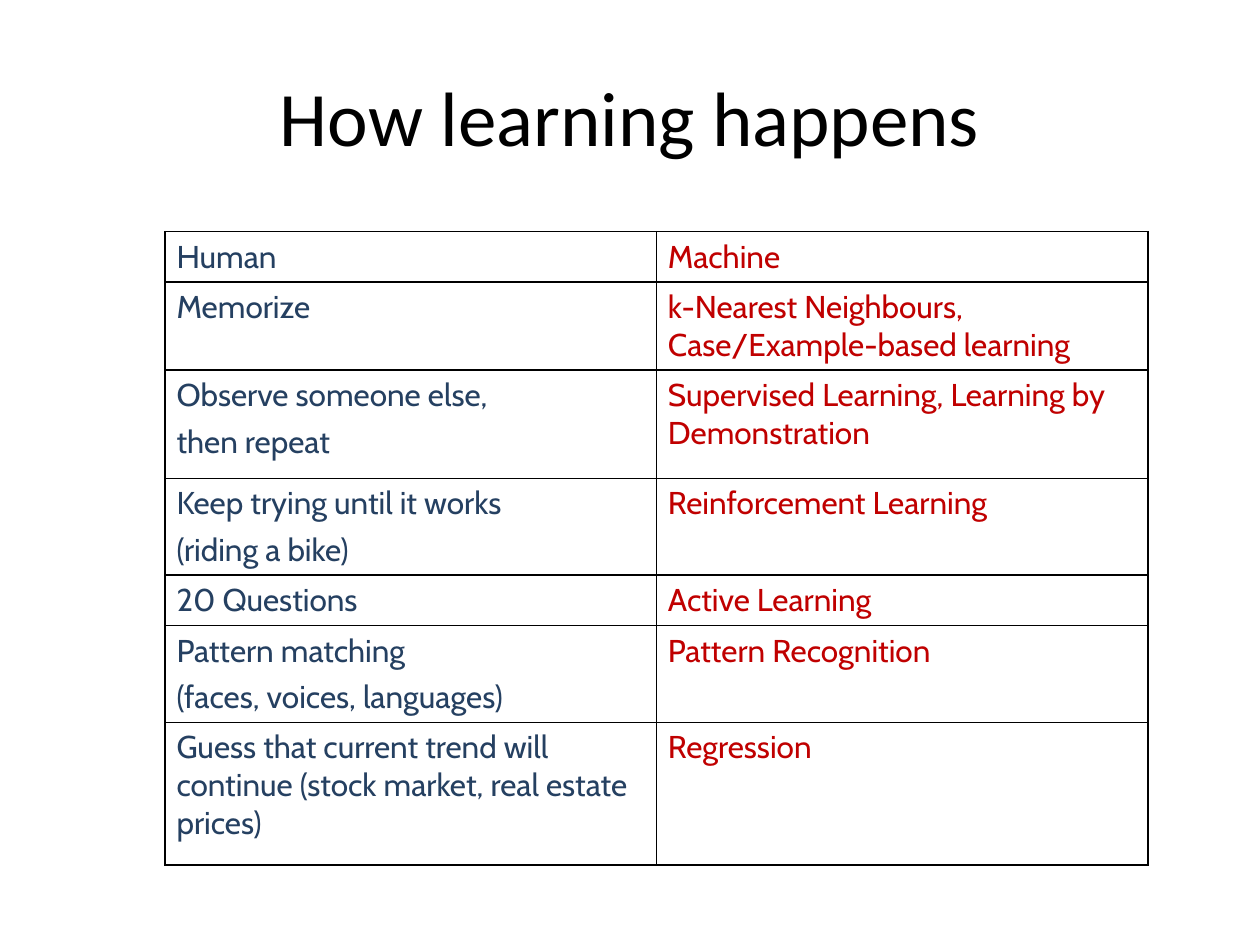
from lxml import etree
from pptx import Presentation
from pptx.dml.color import RGBColor
from pptx.enum import text
from pptx.oxml import ns
from pptx.util import Pt

COLORS = {"title": "000000", "human": "254061", "machine": "C00000", "border": "000000"}

# Row height, human learning, machine learning ("\n" new paragraph, "\v" line break)
ROWS = [
    (28.8, "Human", "Machine"),
    (49.7, "Memorize", "k-Nearest Neighbours,\vCase/Example-based learning"),
    (61.9, "Observe someone else,\nthen repeat",
     "Supervised Learning, Learning by Demonstration"),
    (49.7, "Keep trying until it works\n(riding a bike)", "Reinforcement Learning"),
    (28.8, "20 Questions", "Active Learning"),
    (49.7, "Pattern matching\n(faces, voices, languages)", "Pattern Recognition"),
    (81.4, "Guess that current trend will continue (stock market, real estate prices)",
     "Regression"),
]


def set_font(paragraph, name, size, color):
    paragraph.font.name = name
    paragraph.font.size = Pt(size)
    paragraph.font.color.rgb = RGBColor.from_string(COLORS[color])


def add_borders(cell):
    properties = cell._tc.get_or_add_tcPr()
    for position, side in enumerate(("lnL", "lnR", "lnT", "lnB")):
        line = etree.Element(ns.qn(f"a:{side}"), w=str(Pt(1)))
        fill = etree.SubElement(line, ns.qn("a:solidFill"))
        etree.SubElement(fill, ns.qn("a:srgbClr"), val=COLORS["border"])
        properties.insert(position, line)


prs = Presentation()
prs.slide_width, prs.slide_height = Pt(720), Pt(540)
slide = prs.slides.add_slide(prs.slide_layouts[5])

# Title
title = slide.shapes.title
title.left, title.top, title.width, title.height = Pt(36), Pt(24.5), Pt(648), Pt(83.5)
title.text_frame.text = "How learning happens"
title.text_frame.vertical_anchor = text.MSO_ANCHOR.MIDDLE
title.text_frame.margin_top = Pt(2.9)
heading = title.text_frame.paragraphs[0]
heading.alignment = text.PP_ALIGN.CENTER
set_font(heading, "Calibri", 44, "title")

# Comparison table
comparison = slide.shapes.add_table(
    len(ROWS), 2, Pt(94.3), Pt(132.4), Pt(561.6), Pt(359.3)).table
comparison.first_row = comparison.horz_banding = False
for column in comparison.columns:
    column.width = Pt(280.8)

for row, (height, human, machine) in enumerate(ROWS):
    comparison.rows[row].height = Pt(height)
    for col, (learner, wording) in enumerate((("human", human), ("machine", machine))):
        cell = comparison.cell(row, col)
        cell.fill.background()
        cell.margin_left = cell.margin_right = Pt(6.6)
        cell.margin_top = cell.margin_bottom = Pt(3.6)
        cell.vertical_anchor = text.MSO_ANCHOR.TOP
        add_borders(cell)
        cell.text_frame.text = wording
        for paragraph in cell.text_frame.paragraphs:
            paragraph.line_spacing = 0.98
            paragraph.space_before = Pt(5)
            set_font(paragraph, "Cabin", 18, learner)

prs.save("out.pptx")
